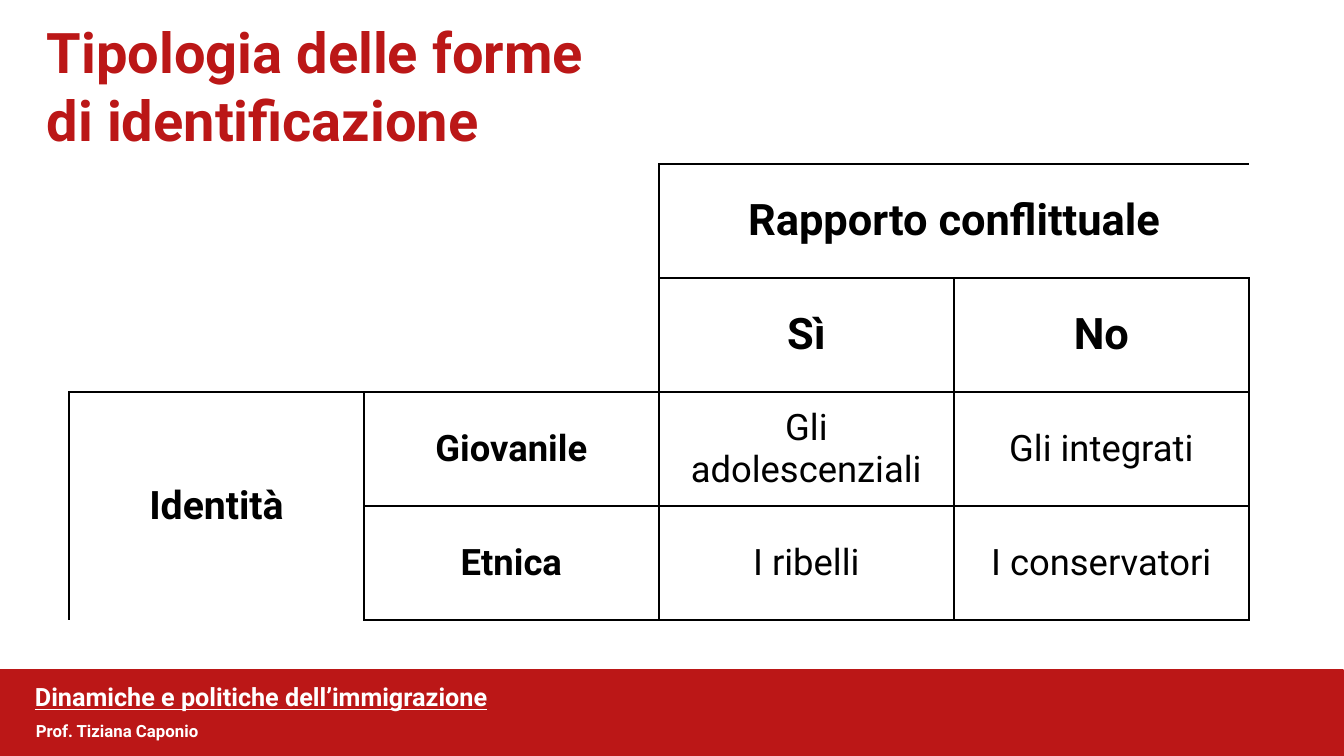
from lxml import etree
from pptx import Presentation
from pptx.dml.color import RGBColor
from pptx.enum import shapes, text
from pptx.oxml.ns import qn

PX = 914400 / 100.8
FONT = "Roboto"
RED, WHITE, BLACK = "BB1717", "FFFFFF", "000000"
# A label repeated in adjoining cells marks a merged area.
GRID = [
    ["", "", "Rapporto conflittuale", "Rapporto conflittuale"],
    ["", "", "Sì", "No"],
    ["Identità", "Giovanile", "Gli adolescenziali", "Gli integrati"],
    ["Identità", "Etnica", "I ribelli", "I conservatori"],
]
SIDES = {"a:lnL": (0, -1), "a:lnR": (0, 1), "a:lnT": (-1, 0), "a:lnB": (1, 0)}


def px(n):
    return round(n * PX)


def rgb(code):
    return RGBColor.from_string(code)


def style(para, size, color, bold=True, under=False):
    for run in para.runs:
        font = run.font
        font.name, font.size = FONT, size * 12700
        font.bold, font.underline = bold, under
        font.color.rgb = rgb(color)


def add_bar(slide, x, y, w, h):
    bar = slide.shapes.add_shape(
        shapes.MSO_SHAPE.RECTANGLE, px(x), px(y), px(w), px(h))
    bar.shadow.inherit = False
    bar.fill.solid()
    bar.fill.fore_color.rgb = rgb(RED)
    bar.line.color.rgb = rgb(RED)
    bar.line.width = 12700


def add_text(slide, box, words, size, color, under=False, lead=None):
    frame = slide.shapes.add_textbox(*map(px, box)).text_frame
    frame.word_wrap = True
    frame.text = words
    for para in frame.paragraphs:
        para.line_spacing = lead
        style(para, size, color, under=under)


def label(row, col):
    inside = 0 <= row < len(GRID) and 0 <= col < len(GRID[0])
    return GRID[row][col] if inside else ""


def set_edges(cell, row, col):
    """Draw a cell's border wherever the label beyond it differs."""
    props = cell._tc.get_or_add_tcPr()
    for tag, (down, right) in SIDES.items():
        line = etree.SubElement(props, qn(tag), w="12700")
        if label(row + down, col + right) == GRID[row][col]:
            etree.SubElement(line, qn("a:noFill"))
        else:
            fill = etree.SubElement(line, qn("a:solidFill"))
            etree.SubElement(fill, qn("a:srgbClr"), val=BLACK)


def fill_cell(cell, words, row, col):
    cell.vertical_anchor = text.MSO_ANCHOR.MIDDLE
    cell.text = words
    para = cell.text_frame.paragraphs[0]
    para.alignment = text.PP_ALIGN.CENTER
    size = 31 if row < 2 else 28 if col == 0 else 26
    style(para, size, BLACK, bold=row < 2 or col < 2)


def add_grid(slide, x, y, wide, high):
    rows, cols = len(GRID), len(GRID[0])
    table = slide.shapes.add_table(
        rows, cols, px(x), px(y), px(wide * cols), px(high * rows)).table
    table.first_row = table.horz_banding = False
    table.cell(0, 2).merge(table.cell(0, 3))
    table.cell(2, 0).merge(table.cell(3, 0))
    for row, words in enumerate(GRID):
        for col, word in enumerate(words):
            cell = table.cell(row, col)
            set_edges(cell, row, col)
            cell.fill.solid()
            cell.fill.fore_color.rgb = rgb(WHITE)
            if word and not cell.is_spanned:
                fill_cell(cell, word, row, col)


def main():
    deck = Presentation()
    deck.slide_width, deck.slide_height = px(1344), px(756)
    slide = deck.slides.add_slide(deck.slide_layouts[6])
    add_bar(slide, -1, 670, 1344, 86)
    add_text(slide, (37, 13, 1305, 146),
             "Tipologia delle forme\ndi identificazione", 40, RED)
    add_text(slide, (26, 718, 1318, 37), "Prof. Tiziana Caponio",
             12, WHITE, lead=0.9)
    add_text(slide, (25, 680, 1319, 37),
             "Dinamiche e politiche dell’immigrazione",
             18, WHITE, under=True, lead=0.9)
    add_grid(slide, 69, 164, 295, 114)
    deck.save("out.pptx")


if __name__ == "__main__":
    main()
